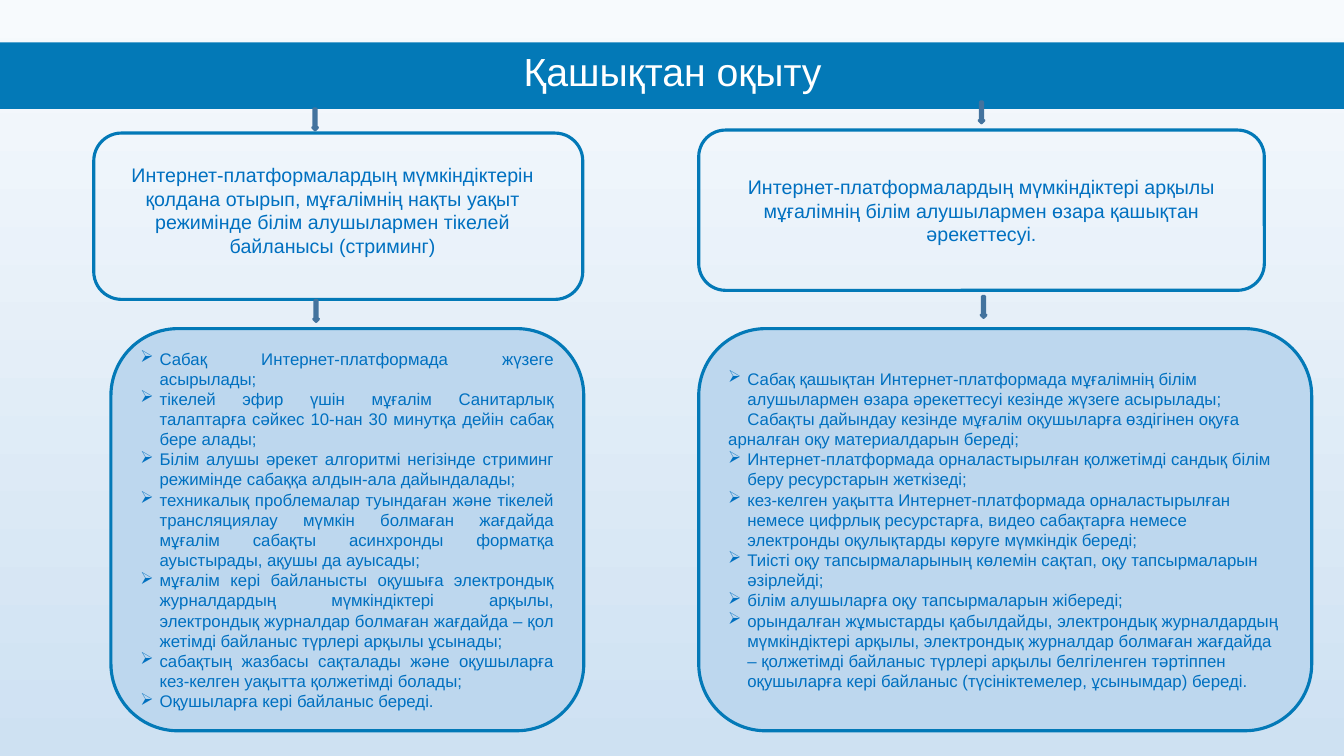
from dataclasses import dataclass
from lxml import etree
from pptx import Presentation
from pptx import util as u
from pptx.dml.color import RGBColor
from pptx.enum import shapes, text
from pptx.oxml.ns import qn

Inches, Pt, rgb = u.Inches, u.Pt, RGBColor.from_string


@dataclass
class Theme:
    font: str = "Arial"
    sky_top: str = "F7FAFD"
    sky_bottom: str = "CEE1F2"
    banner: str = "0379B7"
    panel: str = "BDD7EE"
    arrow: str = "5B9BD5"
    arrow_edge: str = "43739E"
    title: str = "FFFFFF"
    body: str = "0070C0"
    title_size: int = 28
    heading_size: int = 14
    list_size: int = 12


theme = Theme()
deck = Presentation()
deck.slide_width, deck.slide_height = Inches(13.33), Inches(7.5)
slide = deck.slides.add_slide(deck.slide_layouts[6])


def add_block(kind, box, fill=None, edge=None, width=2.25):
    """Add a flat preset shape at box (left, top, width, height)."""
    block = slide.shapes.add_shape(kind, *map(Inches, box))
    block.shadow.inherit = False
    if fill:
        block.fill.solid()
        block.fill.fore_color.rgb = rgb(fill)
    else:
        block.fill.background()
    if edge:
        block.line.color.rgb = rgb(edge)
        block.line.width = Pt(width)
    else:
        block.line.fill.background()
    return block


def write(frame, lines, size, color, align, anchor):
    """Fill a text frame with one paragraph per line."""
    frame.word_wrap = True
    frame.vertical_anchor = anchor
    for i, line in enumerate(lines):
        paragraph = frame.paragraphs[0] if i == 0 else frame.add_paragraph()
        paragraph.text = line
        paragraph.alignment = align
        paragraph.font.name = theme.font
        paragraph.font.size = Pt(size)
        paragraph.font.color.rgb = rgb(color)


MSO, ALIGN, ANCHOR = shapes.MSO_SHAPE, text.PP_ALIGN, text.MSO_ANCHOR

# Background
sky = slide.background.fill
sky.gradient()
sky.gradient_angle = 270
for stop, shade in zip(sky.gradient_stops, (theme.sky_top, theme.sky_bottom)):
    stop.color.rgb = rgb(shade)

# Title banner
add_block(MSO.RECTANGLE, (0, 0.42, 13.33, 0.66), theme.banner)
title = slide.shapes.add_textbox(*map(Inches, (2.91, 0.42, 7.52, 0.57)))
write(title.text_frame, ["Қашықтан оқыту"], theme.title_size, theme.title,
      ALIGN.CENTER, ANCHOR.TOP)

# Headings of the two teaching modes
add_block(MSO.ROUNDED_RECTANGLE, (0.93, 1.32, 4.85, 1.65), edge=theme.banner)
streaming = slide.shapes.add_textbox(*map(Inches, (0.97, 1.57, 4.66, 1.08)))
remote = add_block(MSO.ROUNDED_RECTANGLE, (6.93, 1.29, 5.61, 1.59), edge=theme.banner)
headings = [
    (streaming, ANCHOR.TOP,
     "Интернет-платформалардың мүмкіндіктерін қолдана отырып, мұғалімнің нақты "
     "уақыт режимінде білім алушылармен тікелей байланысы (стриминг)"),
    (remote, ANCHOR.MIDDLE,
     "Интернет-платформалардың мүмкіндіктері арқылы мұғалімнің білім алушылармен "
     "өзара қашықтан әрекеттесуі."),
]
for heading, anchor, wording in headings:
    write(heading.text_frame, [wording], theme.heading_size, theme.body,
          ALIGN.CENTER, anchor)

# Arrows from banner to headings and from headings to lists
for left, top in [(3.1, 1.08), (9.71, 1.01), (3.11, 2.98), (9.73, 2.94)]:
    add_block(MSO.DOWN_ARROW, (left, top, 0.05, 0.21), theme.arrow, theme.arrow_edge, 2)

# Lists of steps
streaming_steps = [
    "Сабақ Интернет-платформада жүзеге асырылады;",
    "тікелей эфир үшін мұғалім Санитарлық талаптарға сәйкес 10-нан 30 минутқа "
    "дейін сабақ бере алады;",
    "Білім алушы әрекет алгоритмі негізінде стриминг режимінде сабаққа алдын-ала "
    "дайындалады;",
    "техникалық проблемалар туындаған және тікелей трансляциялау мүмкін болмаған "
    "жағдайда мұғалім сабақты асинхронды форматқа ауыстырады, ақушы да ауысады;",
    "мұғалім кері байланысты оқушыға электрондық журналдардың мүмкіндіктері арқылы, "
    "электрондық журналдар болмаған жағдайда – қол жетімді байланыс түрлері арқылы "
    "ұсынады;",
    "сабақтың жазбасы сақталады және оқушыларға кез-келген уақытта қолжетімді болады;",
    "Оқушыларға кері байланыс береді.",
]
preparation = ("Сабақты дайындау кезінде мұғалім оқушыларға өздігінен оқуға арналған "
               "оқу материалдарын береді;")
remote_steps = [
    "Сабақ қашықтан Интернет-платформада мұғалімнің білім алушылармен өзара "
    "әрекеттесуі кезінде жүзеге асырылады;",
    preparation,
    "Интернет-платформада орналастырылған қолжетімді сандық білім беру ресурстарын "
    "жеткізеді;",
    "кез-келген уақытта Интернет-платформада орналастырылған немесе цифрлық "
    "ресурстарға, видео сабақтарға немесе электронды оқулықтарды көруге мүмкіндік "
    "береді;",
    "Тиісті оқу тапсырмаларының көлемін сақтап, оқу тапсырмаларын әзірлейді;",
    "білім алушыларға оқу тапсырмаларын жібереді;",
    "орындалған жұмыстарды қабылдайды, электрондық журналдардың мүмкіндіктері арқылы, "
    "электрондық журналдар болмаған жағдайда – қолжетімді байланыс түрлері арқылы "
    "белгіленген тәртіппен оқушыларға кері байланыс (түсініктемелер, ұсынымдар) береді.",
]
indent = Inches(0.19)
for left, width, align, steps in [(1.1, 4.69, ALIGN.JUSTIFY, streaming_steps),
                                  (6.93, 6.08, ALIGN.LEFT, remote_steps)]:
    panel = add_block(MSO.ROUNDED_RECTANGLE, (left, 3.26, width, 3.99),
                      theme.panel, theme.banner)
    write(panel.text_frame, steps, theme.list_size, theme.body, align, ANCHOR.MIDDLE)
    for paragraph in panel.text_frame.paragraphs:
        props = paragraph._p.get_or_add_pPr()
        if paragraph.text == preparation:  # plain first-line indent, no bullet
            props.set("indent", str(indent))
            continue
        props.set("marL", str(indent))
        props.set("indent", str(-indent))
        bullet = etree.Element(qn("a:buChar"), char="➢")
        props.insert(0, bullet)

deck.save("out.pptx")
